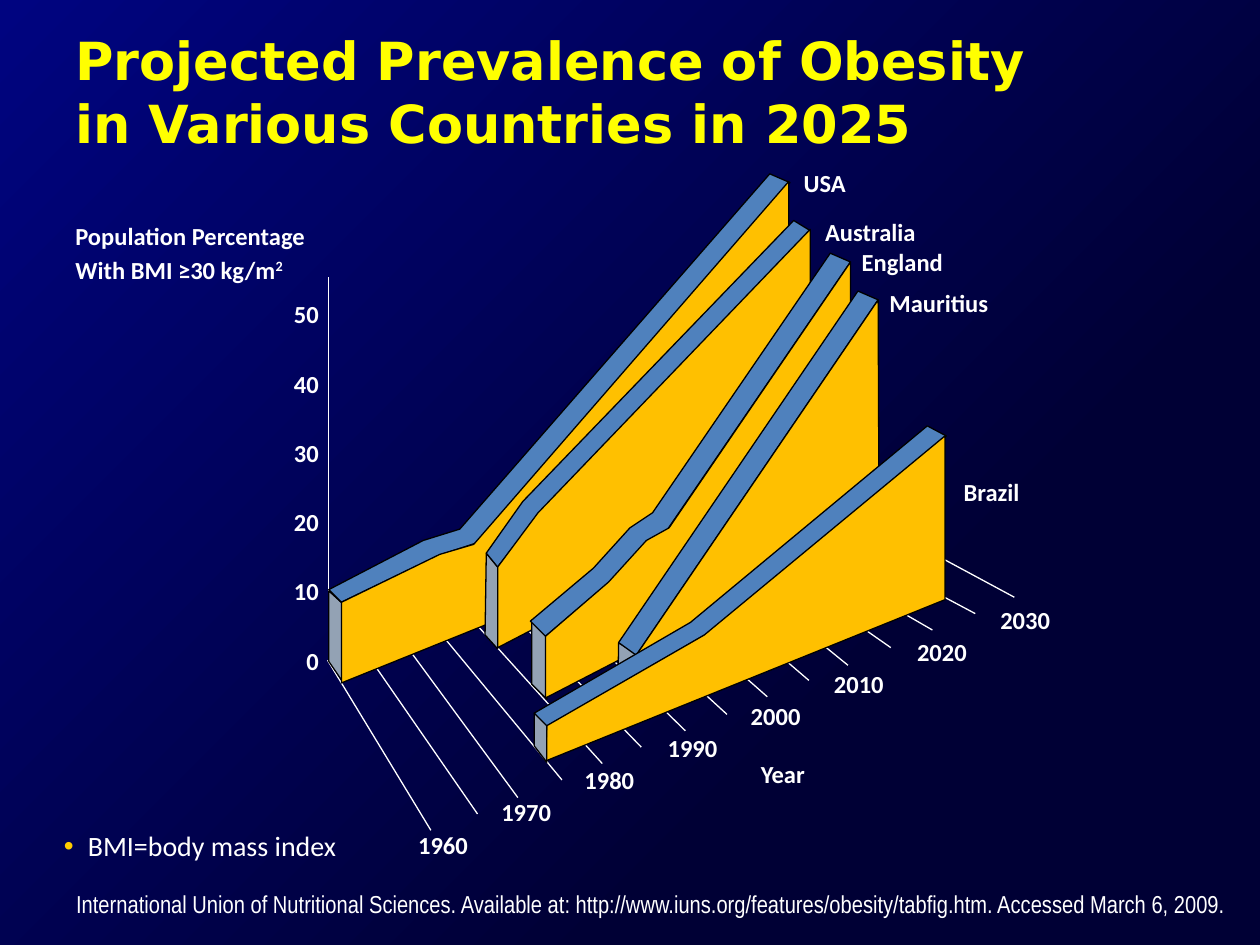
from lxml import etree
from pptx import Presentation
from pptx import util as u
from pptx.dml.color import RGBColor
from pptx.enum import shapes, text
from pptx.oxml import parse_xml
from pptx.oxml.ns import nsdecls, qn

COLORS = {
    "white": "FFFFFF", "title": "FFFF00", "bullet": "FFCC00", "outline": "000000",
    "side": "93A2B4", "top": "4F81BD", "front": "FFC000",
    "dark": "000035", "blue": "000480",
}

YEAR_LINES = [
    (2.6, 5.24, 3.42, 6.59), (2.87, 5.13, 3.79, 6.46), (3.14, 5.01, 4.11, 6.33),
    (3.4, 4.91, 4.46, 6.19), (3.64, 4.8, 4.78, 6.06), (3.89, 4.69, 5.09, 5.93),
    (4.17, 4.56, 5.44, 5.8), (4.45, 4.46, 5.77, 5.67), (4.74, 4.34, 6.09, 5.53),
    (5.02, 4.2, 6.42, 5.4), (5.28, 4.1, 6.73, 5.28), (5.48, 4.03, 7.07, 5.14),
    (5.72, 4.03, 7.4, 5), (6.03, 3.96, 7.74, 4.87), (6.36, 3.83, 8.05, 4.74),
]

COUNTRIES = [
    ("USA", 6.28, 1.25, [
        ("side", [(2.61, 4.69), (2.72, 4.79), (2.72, 5.41), (2.61, 5.25)]),
        ("top", [(2.71, 4.78), (3.48, 4.41), (3.78, 4.31), (6.27, 1.45),
                 (6.11, 1.38), (3.65, 4.2), (3.36, 4.29), (2.61, 4.68)]),
        ("front", [(2.71, 4.78), (2.71, 5.42), (6.26, 3.99), (6.26, 1.44),
                   (3.76, 4.32), (3.49, 4.4)]),
    ]),
    ("Australia", 6.45, 1.64, [
        ("side", [(3.86, 4.39), (3.95, 4.5), (3.95, 5.15), (3.85, 5.04)]),
        ("top", [(3.95, 4.5), (4.29, 4.06), (6.43, 1.83), (6.3, 1.75),
                 (4.15, 3.98), (3.86, 4.39)]),
        ("front", [(3.95, 5.14), (6.43, 3.85), (6.43, 1.82), (4.27, 4.07), (3.95, 4.5)]),
    ]),
    ("England", 6.74, 1.88, [
        ("side", [(4.22, 4.92), (4.34, 5.05), (4.34, 5.55), (4.22, 5.43)]),
        ("top", [(4.33, 5.05), (4.86, 4.6), (5.13, 4.3), (5.3, 4.2), (6.75, 2.08),
                 (6.59, 2.01), (5.18, 4.07), (5, 4.19), (4.71, 4.51), (4.21, 4.93)]),
        ("front", [(4.33, 5.05), (4.33, 5.54), (6.75, 4.29), (6.75, 2.08),
                   (5.31, 4.19), (5.13, 4.29), (4.83, 4.62)]),
    ]),
    ("Mauritius", 6.96, 2.2, [
        ("side", [(4.91, 5.1), (5.05, 5.19), (5.05, 5.72), (4.9, 5.66)]),
        ("top", [(5.05, 5.2), (6.97, 2.38), (6.81, 2.31), (4.91, 5.1)]),
        ("front", [(5.05, 5.7), (6.98, 4.91), (6.97, 2.38), (5.05, 5.2)]),
    ]),
    ("Brazil", 7.55, 3.7, [
        ("top", [(4.33, 5.77), (5.61, 5.03), (7.51, 3.46), (7.36, 3.38),
                 (5.48, 4.94), (4.24, 5.66)]),
        ("front", [(4.33, 6.04), (7.5, 4.76), (7.5, 3.46), (5.59, 5.04), (4.34, 5.76)]),
        ("side", [(4.24, 5.66), (4.34, 5.76), (4.34, 6.05), (4.24, 5.92)]),
    ]),
]


def rgb(name):
    return RGBColor.from_string(COLORS[name])


class Painter:
    def __init__(self, slide):
        self.shapes = slide.shapes

    def backdrop(self, width, height):
        sp = self.shapes.add_shape(shapes.MSO_SHAPE.RECTANGLE, 0, 0, width, height)
        sp.shadow.inherit = False
        sp.line.fill.background()
        sp.fill.background()
        grad = parse_xml(
            f'<a:gradFill {nsdecls("a")} rotWithShape="0"><a:gsLst>'
            f'<a:gs pos="30000"><a:srgbClr val="{COLORS["dark"]}"/></a:gs>'
            f'<a:gs pos="100000"><a:srgbClr val="{COLORS["blue"]}"/></a:gs></a:gsLst>'
            '<a:path path="circle"><a:fillToRect l="100000" t="100000"/></a:path></a:gradFill>')
        props = sp._element.spPr
        props.replace(props.find(qn("a:noFill")), grad)

    def line(self, x1, y1, x2, y2):
        cx = self.shapes.add_connector(
            shapes.MSO_CONNECTOR.STRAIGHT, *map(u.Inches, (x1, y1, x2, y2)))
        cx.line.color.rgb = rgb("white")
        cx.line.width = u.Pt(0.75)
        etree.SubElement(cx._element.spPr, qn("a:effectLst"))

    def face(self, color, points):
        start, *rest = [(u.Inches(x), u.Inches(y)) for x, y in points]
        builder = self.shapes.build_freeform(*start)
        builder.add_line_segments(rest, close=True)
        sp = builder.convert_to_shape()
        sp.shadow.inherit = False
        sp.fill.solid()
        sp.fill.fore_color.rgb = rgb(color)
        sp.line.color.rgb = rgb("outline")
        sp.line.width = u.Pt(0.75)

    def text(self, content, x, y, w, h, size=14, font="Calibri", color="white",
             bold=True, align=text.PP_ALIGN.LEFT, spacing=1.0, inset=None,
             anchor=text.MSO_ANCHOR.TOP):
        sp = self.shapes.add_textbox(*map(u.Inches, (x, y, w, h)))
        tf = sp.text_frame
        tf.word_wrap = True
        tf.vertical_anchor = anchor
        if inset is not None:
            tf.margin_left = tf.margin_right = u.Inches(inset)
            tf.margin_top = tf.margin_bottom = u.Inches(inset)
        tf.text = content
        for p in tf.paragraphs:
            p.alignment = align
            p.line_spacing = spacing
            for r in p.runs:
                self.style(r, size, font, color, bold)
        return tf

    def style(self, r, size=14, font="Calibri", color="white", bold=True):
        r.font.size = u.Pt(size)
        r.font.name = font
        r.font.bold = bold
        r.font.color.rgb = rgb(color)

    def label(self, content, x, y, w=0.68, h=0.34):
        return self.text(content, x, y, w, h, spacing=1.15)

    def superscript(self, p, content):
        r = p.add_run()
        r.text = content
        self.style(r)
        r.font._element.set("baseline", "30000")

    def bullet(self, p):
        props = p._p.get_or_add_pPr()
        indent = u.Inches(0.19)
        props.set("marL", str(indent))
        props.set("indent", str(-indent))
        color = etree.SubElement(props, qn("a:buClr"))
        etree.SubElement(color, qn("a:srgbClr"), val=COLORS["bullet"])
        etree.SubElement(props, qn("a:buFont"), typeface="Arial")
        etree.SubElement(props, qn("a:buChar"), char="•")


def main():
    prs = Presentation()
    prs.slide_width, prs.slide_height = u.Inches(10), u.Inches(7.5)
    s = Painter(prs.slides.add_slide(prs.slide_layouts[6]))

    s.backdrop(prs.slide_width, prs.slide_height)
    s.text("Projected Prevalence of Obesity in Various Countries in 2025",
           0.5, 0.17, 8.01, 1.25, size=30, font="DejaVu Sans", color="title")
    s.text("International Union of Nutritional Sciences. Available at: "
           "http://www.iuns.org/features/obesity/tabfig.htm. Accessed March 6, 2009.",
           0.5, 6.92, 9.33, 0.5, font="Arial Narrow", bold=False,
           align=text.PP_ALIGN.RIGHT, anchor=text.MSO_ANCHOR.MIDDLE)

    for ends in YEAR_LINES:
        s.line(*ends)
    s.line(2.61, 2.2, 2.61, 5.25)

    for name, x, y, faces in COUNTRIES:
        for color, points in faces:
            s.face(color, points)
        s.label(name, x, y, w=1.95)

    for i in range(6):
        s.text(str(10 * i), 1.79, 4.99 - 0.55 * i, 0.74, 0.32,
               align=text.PP_ALIGN.RIGHT, spacing=1.58, inset=0)
    for i, year in enumerate(range(1960, 2031, 10)):
        s.label(str(year), 3.22 + 0.66 * i, 6.5 - 0.255 * i)
    s.label("Year", 5.94, 5.94)

    tf = s.label("Population Percentage\nWith BMI ≥30 kg/m", 0.5, 1.67, 2.44, 0.62)
    s.superscript(tf.paragraphs[1], "2")

    tf = s.text("BMI=body mass index", 0.41, 6.53, 8.96, 0.33, size=16, bold=False)
    s.bullet(tf.paragraphs[0])

    prs.save("out.pptx")


if __name__ == "__main__":
    main()
